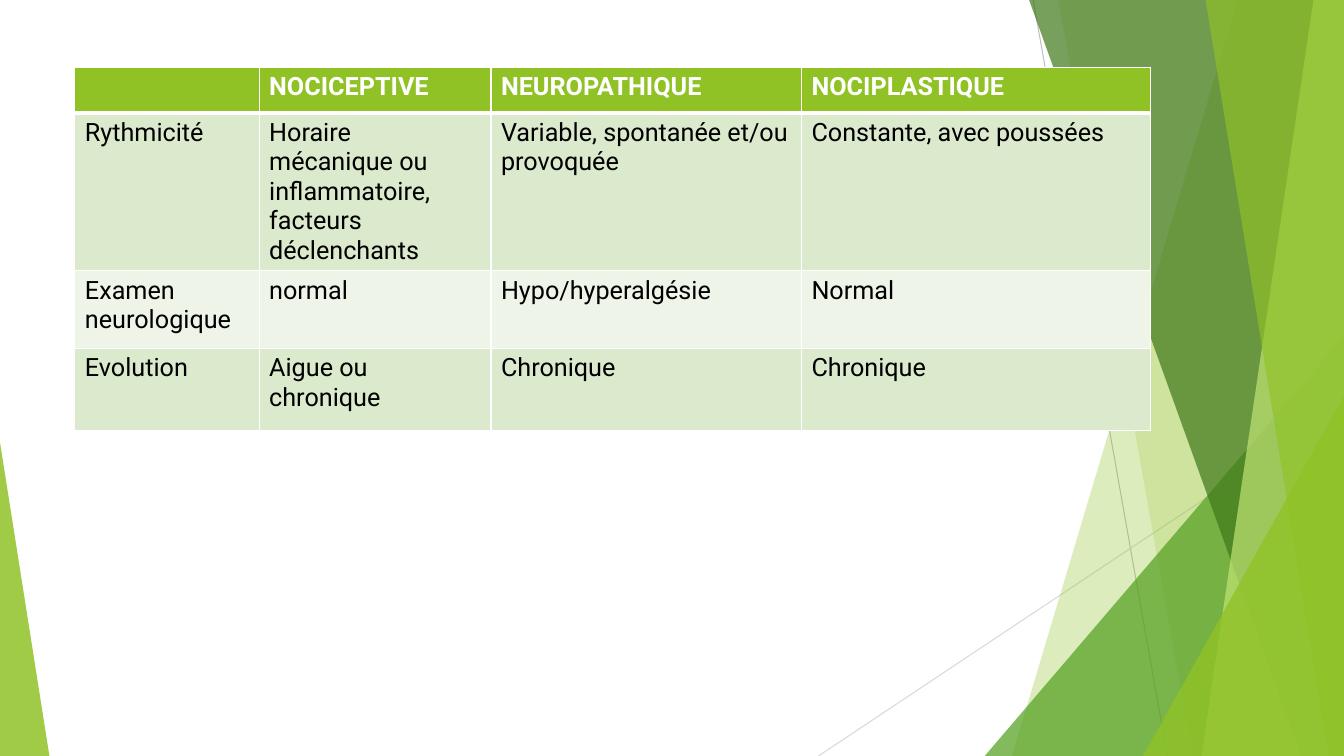
from lxml.etree import SubElement
from pptx import Presentation
from pptx.dml.color import RGBColor
from pptx.enum.shapes import MSO_CONNECTOR, MSO_SHAPE
from pptx.oxml.ns import qn
from pptx.util import Pt

WHITE = RGBColor(0xFF, 0xFF, 0xFF)
BLACK = RGBColor(0x00, 0x00, 0x00)
SILVER = RGBColor(0xBF, 0xBF, 0xBF)
PALE = RGBColor(0xD9, 0xD9, 0xD9)
LIME = RGBColor(0x90, 0xC2, 0x26)
GREEN = RGBColor(0x54, 0xA0, 0x21)
FOREST = RGBColor(0x3F, 0x78, 0x19)
LIGHT = RGBColor(0xC0, 0xE4, 0x74)
BAND = RGBColor(0xDB, 0xE9, 0xCD)
MIST = RGBColor(0xEE, 0xF4, 0xE8)

WIDE, HIGH = 960, 540
WIDTHS = [131.6, 165.6, 221.8, 249.6]
HEIGHTS = [32.4, 112.5, 55.4, 59]
ROWS = [
    ["", "NOCICEPTIVE", "NEUROPATHIQUE", "NOCIPLASTIQUE"],
    ["Rythmicité", "Horaire mécanique ou inflammatoire, facteurs déclenchants",
     "Variable, spontanée et/ou provoquée", "Constante, avec poussées"],
    ["Examen neurologique", "normal", "Hypo/hyperalgésie", "Normal"],
    ["Evolution", "Aigue ou chronique", "Chronique", "Chronique"],
]


class Painter:
    font = "Roboto"
    size = 18

    def __init__(self, slide):
        self.slide = slide
        self.shapes = slide.shapes

    def line(self, start, end, color):
        line = self.shapes.add_connector(
            MSO_CONNECTOR.STRAIGHT, *map(Pt, start + end))
        line.line.color.rgb = color
        line.line.width = Pt(0.75)
        SubElement(line._element.spPr, qn("a:effectLst"))

    def paint(self, shape, color, alpha):
        shape.shadow.inherit = False
        shape.line.fill.background()
        shape.fill.solid()
        shape.fill.fore_color.rgb = color
        tint = shape._element.spPr.find(qn("a:solidFill"))[0]
        SubElement(tint, qn("a:alpha"), val=str(alpha * 1000))

    def shard(self, top, foot, color, alpha):
        form = self.shapes.build_freeform(Pt(top), 0)
        form.add_line_segments(
            [(Pt(WIDE), 0), (Pt(WIDE), Pt(HIGH)), (Pt(foot), Pt(HIGH))])
        self.paint(form.convert_to_shape(), color, alpha)

    def wedge(self, left, top, width, peak, color, alpha):
        shape = self.shapes.add_shape(
            MSO_SHAPE.ISOSCELES_TRIANGLE,
            Pt(left), Pt(top), Pt(width), Pt(HIGH - top))
        shape.adjustments[0] = peak
        self.paint(shape, color, alpha)

    def border(self, cell, side, width):
        edge = SubElement(cell._tc.get_or_add_tcPr(), qn("a:ln" + side),
                          w=str(Pt(width)))
        fill = SubElement(edge, qn("a:solidFill"))
        SubElement(fill, qn("a:srgbClr"), val=str(WHITE))

    def cell(self, cell, text, row):
        head = row == 0
        for side in "LRTB":
            thick = (row, side) in ((0, "B"), (1, "T"))
            self.border(cell, side, 3 if thick else 1)
        cell.fill.solid()
        cell.fill.fore_color.rgb = LIME if head else BAND if row % 2 else MIST
        if text:
            run = cell.text_frame.paragraphs[0].add_run()
            run.text = text
            run.font.name = self.font
            run.font.size = Pt(self.size)
            run.font.bold = head
            run.font.color.rgb = WHITE if head else BLACK

    def table(self, left, top, rows, widths, heights):
        frame = self.shapes.add_table(
            len(rows), len(widths), Pt(left), Pt(top),
            Pt(sum(widths)), Pt(sum(heights)))
        table = frame.table
        for column, width in zip(table.columns, widths):
            column.width = Pt(width)
        for row, height in enumerate(heights):
            table.rows[row].height = Pt(height)
            for col, text in enumerate(rows[row]):
                self.cell(table.cell(row, col), text, row)


def main():
    deck = Presentation()
    deck.slide_width, deck.slide_height = Pt(WIDE), Pt(HIGH)
    page = Painter(deck.slides.add_slide(deck.slide_layouts[6]))
    page.line((738, 0), (833.8, HIGH), SILVER)
    page.line((WIDE, 290.2), (584.6, HIGH), PALE)
    page.shard(884.2, 722.9, LIME, 30)
    page.shard(756, 851.8, LIME, 20)
    page.wedge(703.4, 240, 256.6, 1, GREEN, 72)
    page.shard(735.1, 929.5, FOREST, 70)
    page.shard(938.2, 858.2, LIGHT, 70)
    page.shard(861.1, 949, LIME, 65)
    page.wedge(816.5, 283, 143.5, 1, LIME, 80)
    page.wedge(0, 316, 35.3, 0, LIME, 85)
    page.table(53.5, 48.2, ROWS, WIDTHS, HEIGHTS)
    deck.save("out.pptx")


if __name__ == "__main__":
    main()
